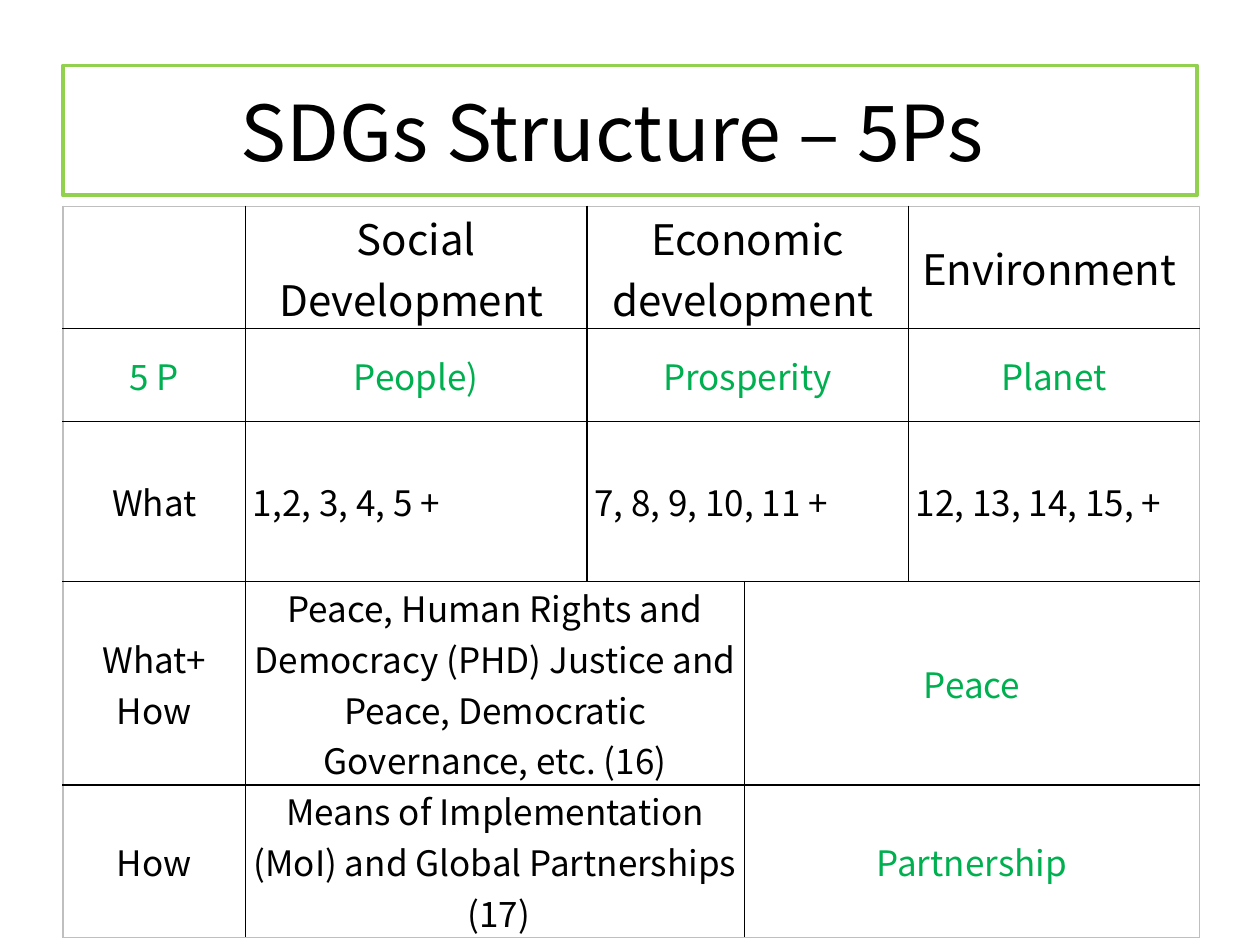
from lxml.etree import SubElement as Sub, Element
from pptx import Presentation
from pptx.dml.color import RGBColor as RGB
from pptx.enum.text import MSO_ANCHOR as Anchor, PP_ALIGN as Align
from pptx.oxml.ns import qn
from pptx.util import Cm, Pt

FONT = "Noto Sans CJK KR"
HEX = {"ink": "000000", "green": "00B050", "frame": "92D050", "edge": "BFBFBF"}
COLS = [3.68, 6.88, 3.18, 3.3, 5.87]
ROWS = [2.39, 1.88, 3.23, 1.88, 2.11]
THREE = [(0, 0), (1, 1), (2, 3), (4, 4)]
TWO = [(0, 0), (1, 2), (3, 4)]

# Each row: column spans, then (text, size, colour, alignment) for each span
HEAD = [(text, 24, "ink", Align.CENTER) for text in
        ("", "Social Development ", "Economic development ", "Environment ")]
FIVE = [(text, 20, "green", Align.CENTER) for text in
        ("5 P", "People)", "Prosperity", "Planet")]
WHAT = [("What", 20, "ink", Align.CENTER)] + [
    (text, 20, "ink", Align.LEFT) for text in
    ("1,2, 3, 4, 5 +", "7, 8, 9, 10, 11 +", "12, 13, 14, 15, +")]
PEACE = [
    ("What+\nHow", 20, "ink", Align.CENTER),
    ("Peace, Human Rights and Democracy (PHD) Justice and Peace, "
     "Democratic Governance, etc. (16)", 20, "ink", Align.CENTER),
    ("Peace", 20, "green", Align.CENTER)]
MEANS = [
    ("How", 20, "ink", Align.CENTER),
    ("Means of Implementation (MoI) and Global Partnerships  (17)",
     20, "ink", Align.CENTER),
    ("Partnership", 20, "green", Align.CENTER)]
BODY = [(THREE, HEAD), (THREE, FIVE), (THREE, WHAT), (TWO, PEACE), (TWO, MEANS)]


def color(name):
    return RGB.from_string(HEX[name])


def write(frame, text, size, ink, align):
    for i, line in enumerate(text.split("\n")):
        para = frame.add_paragraph() if i else frame.paragraphs[0]
        para.alignment = align
        if line:
            run = para.add_run()
            run.text = line
            run.font.name = FONT
            run.font.size = Pt(size)
            run.font.color.rgb = color(ink)


def border(cell, outer):
    """Draw four sides; those named in outer get the light edge colour."""
    props = cell._tc.get_or_add_tcPr()
    for i, side in enumerate("LRTB"):
        line = Element(qn(f"a:ln{side}"), w=str(Pt(1)))
        fill = Sub(line, qn("a:solidFill"))
        Sub(fill, qn("a:srgbClr"), val=HEX["edge" if side in outer else "ink"])
        props.insert(i, line)


def add_title(slide):
    title = slide.shapes.title
    title.left, title.top = Cm(1.27), Cm(1.32)
    title.width, title.height = Cm(22.86), Cm(2.62)
    title.line.color.rgb = color("frame")
    title.line.width = Pt(2.25)
    title.text_frame.vertical_anchor = Anchor.MIDDLE
    write(title.text_frame, "SDGs Structure – 5Ps  ", 44, "ink", Align.CENTER)


def add_grid(slide):
    grid = slide.shapes.add_table(len(ROWS), len(COLS), Cm(1.27), Cm(4.16),
                                  Cm(sum(COLS)), Cm(sum(ROWS))).table
    grid.first_row = grid.horz_banding = False
    for col, width in zip(grid.columns, COLS):
        col.width = Cm(width)
    for row, height in zip(grid.rows, ROWS):
        row.height = Cm(height)
    for r, (spans, items) in enumerate(BODY):
        for (first, last), item in zip(spans, items):
            outer = {"L": first == 0, "R": last == len(COLS) - 1,
                     "T": r == 0, "B": r == len(ROWS) - 1}
            for c in range(first, last + 1):
                cell = grid.cell(r, c)
                cell.fill.background()
                cell.vertical_anchor = Anchor.MIDDLE
                cell.margin_left = cell.margin_right = Cm(0.15)
                cell.margin_top = cell.margin_bottom = 0
                border(cell, [side for side in outer if outer[side]])
            cell = grid.cell(r, first)
            if last > first:
                cell.merge(grid.cell(r, last))
            write(cell.text_frame, *item)


def main():
    deck = Presentation()
    deck.slide_width, deck.slide_height = Cm(25.4), Cm(19.05)
    slide = deck.slides.add_slide(deck.slide_layouts[5])
    add_title(slide)
    add_grid(slide)
    deck.save("out.pptx")


if __name__ == "__main__":
    main()
